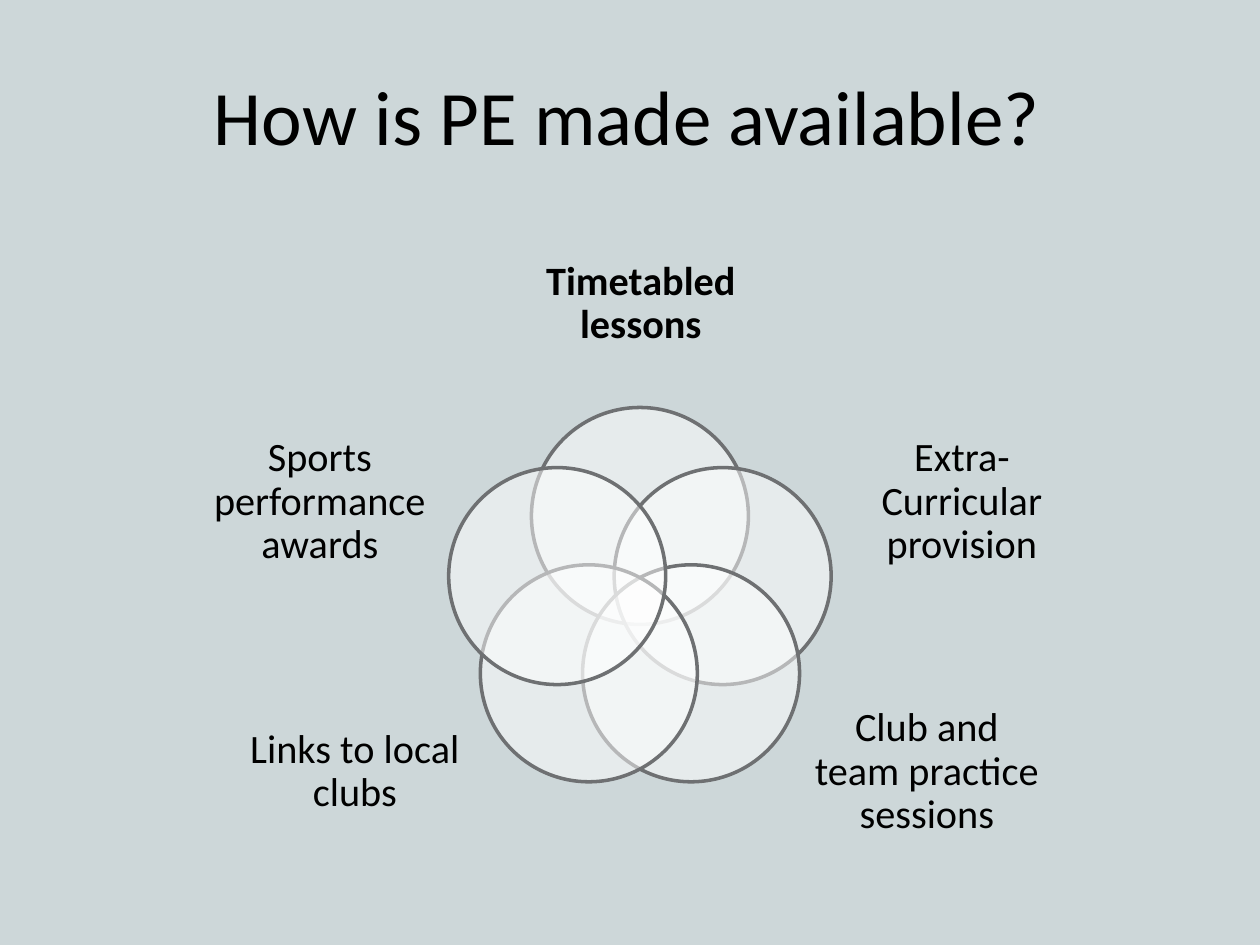
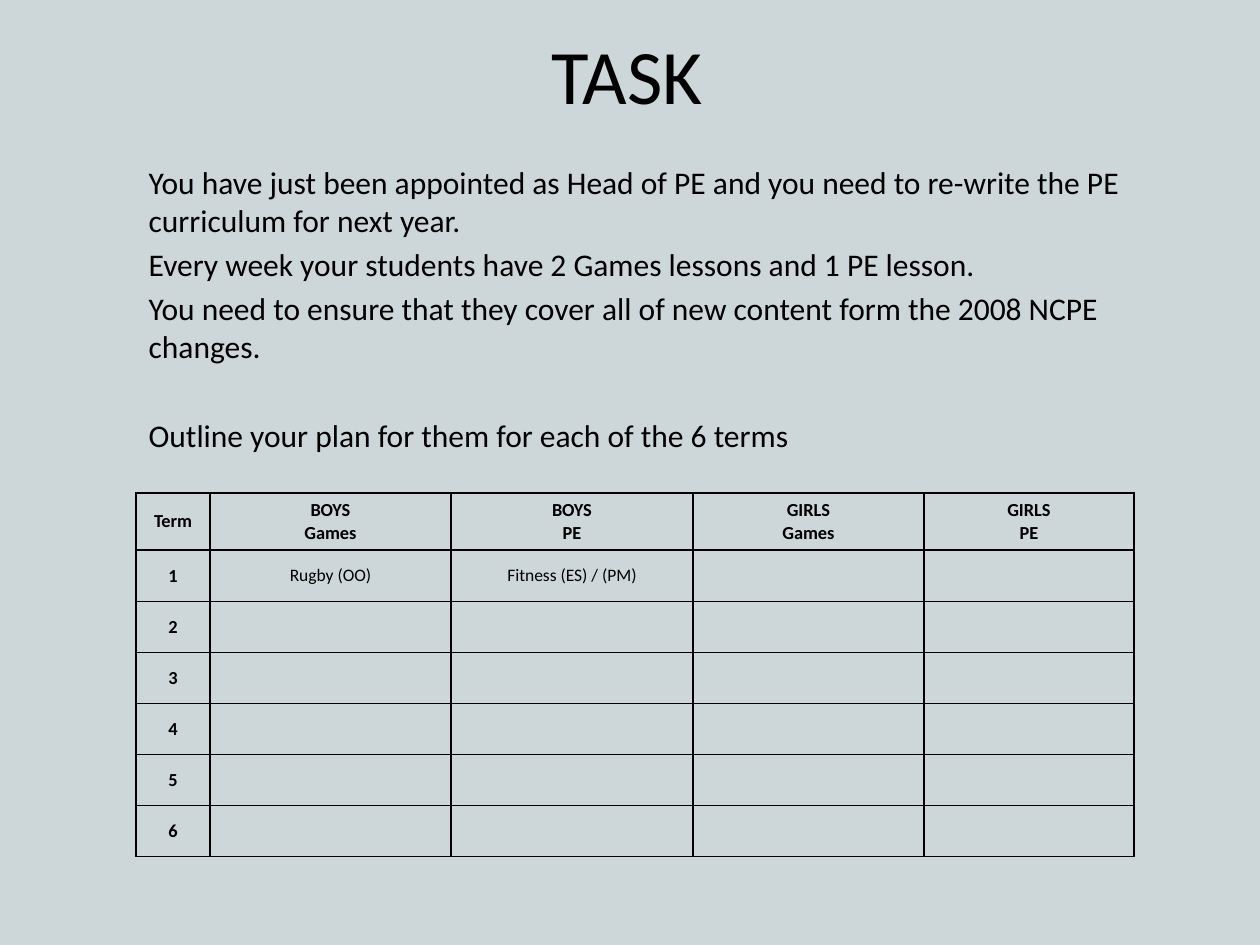
import math
from lxml import etree
from pptx import Presentation, util as u
from pptx.dml.color import RGBColor
from pptx.enum import shapes, text
from pptx.oxml.ns import qn

# Content
VENN_TITLE = "How is PE made available?"
# label, box (left, top, width, height), bold; clockwise from the top
VENN = [
    ("Timetabled lessons", (515, 231, 252, 146), True),
    ("Extra-Curricular provision", (849, 423, 226, 158), False),
    ("Club and team practice sessions", (814, 693, 226, 158), False),
    ("Links to local clubs", (242, 693, 226, 158), False),
    ("Sports performance awards", (207, 423, 226, 158), False),
]
TASK_TITLE = "TASK"
# paragraph, space before in points
TASK = [
    ("You have just been appointed as Head of PE and you need to re-write the PE "
     "curriculum for next year.", 3.6),
    ("Every week your students have 2 Games lessons and 1 PE lesson.", 3.6),
    ("You need to ensure that they cover all of new content form the 2008 NCPE changes.", 3.6),
    ("Outline your plan for them for each of the 6 terms", 29),
]
HEADER = [["Term"], ["BOYS", "Games"], ["BOYS", "PE"], ["GIRLS", "Games"], ["GIRLS", "PE"]]
TERMS = 6
PLAN = {(1, 1): "Rugby (OO)", (1, 2): "Fitness (ES) / (PM)"}

# Shared look and measures
COLORS = {"back": "CDD7D9", "text": "000000", "circle": "FFFFFF", "ring": "6E7072"}
FONT = "Calibri"
RING_CENTER, RING_RADIUS, CIRCLE = (640, 603), 87, 217
COL_WIDTHS = [74, 241, 242, 231, 210]
HEAD_HEIGHT, ROW_HEIGHT = 57, 51


def px(n):
    return u.Emu(round(n * 914400 / 126))


def rgb(name):
    return RGBColor.from_string(COLORS[name])


def place(sp, box):
    sp.left, sp.top, sp.width, sp.height = map(px, box)


def add_run(p, words, size, bold=False):
    r = p.add_run()
    r.text = words
    r.font.name, r.font.size, r.font.bold = FONT, u.Pt(size), bold
    r.font.color.rgb = rgb("text")


def add_slide(prs, layout, title, box):
    s = prs.slides.add_slide(prs.slide_layouts[layout])
    place(s.shapes.title, box)
    tf = s.shapes.title.text_frame
    tf.auto_size = text.MSO_AUTO_SIZE.NONE
    tf.vertical_anchor = text.MSO_ANCHOR.MIDDLE
    tf.paragraphs[0].alignment = text.PP_ALIGN.CENTER
    add_run(tf.paragraphs[0], title, 44)
    return s


def add_circle(group, index):
    angle = math.radians(360 / len(VENN) * index)
    left = RING_CENTER[0] + RING_RADIUS * math.sin(angle) - CIRCLE / 2
    top = RING_CENTER[1] - RING_RADIUS * math.cos(angle) - CIRCLE / 2
    sp = group.shapes.add_shape(shapes.MSO_SHAPE.OVAL, *map(px, (left, top, CIRCLE, CIRCLE)))
    sp.shadow.inherit = False
    sp.fill.solid()
    sp.fill.fore_color.rgb = rgb("circle")
    color = sp.fill._xPr.find(qn("a:solidFill"))[0]
    etree.SubElement(color, qn("a:alpha"), val="50000")
    sp.line.color.rgb = rgb("ring")
    sp.line.width = u.Pt(2)


def add_label(group, words, box, bold):
    tf = group.shapes.add_textbox(*map(px, box)).text_frame
    tf.word_wrap = True
    tf.vertical_anchor = text.MSO_ANCHOR.MIDDLE
    tf.margin_left = tf.margin_right = tf.margin_top = tf.margin_bottom = 0
    p = tf.paragraphs[0]
    p.alignment, p.line_spacing = text.PP_ALIGN.CENTER, 0.9
    add_run(p, words, 23, bold)


def fill_cell(cell, lines, size, bold):
    tc_pr = cell._tc.get_or_add_tcPr()
    for side in ("lnL", "lnR", "lnT", "lnB"):
        ln = etree.SubElement(tc_pr, qn("a:" + side), w=str(u.Pt(1)))
        fill = etree.SubElement(ln, qn("a:solidFill"))
        etree.SubElement(fill, qn("a:srgbClr"), val=COLORS["text"])
    cell.fill.background()
    cell.vertical_anchor = text.MSO_ANCHOR.MIDDLE
    tf = cell.text_frame
    for i, line in enumerate(lines):
        p = tf.add_paragraph() if i else tf.paragraphs[0]
        p.alignment = text.PP_ALIGN.CENTER
        add_run(p, line, size, bold)


def venn_slide(prs):
    s = add_slide(prs, 5, VENN_TITLE, (147, 32, 960, 166))
    group = s.shapes.add_group_shape()
    for i, (words, box, bold) in enumerate(VENN):
        add_circle(group, i)
        add_label(group, words, box, bold)


def task_slide(prs):
    s = add_slide(prs, 1, TASK_TITLE, (147, 21, 960, 105))

    # Instructions
    body = s.placeholders[1]
    place(body, (136, 157, 998, 349))
    tf = body.text_frame
    tf.auto_size = text.MSO_AUTO_SIZE.NONE
    for i, (words, space) in enumerate(TASK):
        p = tf.add_paragraph() if i else tf.paragraphs[0]
        p.space_before = u.Pt(space)
        p_pr = p._p.get_or_add_pPr()
        p_pr.set("marL", "0")
        p_pr.set("indent", "0")
        etree.SubElement(p_pr, qn("a:buNone"))
        add_run(p, words, 18)

    # Plan table
    heights = [HEAD_HEIGHT] + [ROW_HEIGHT] * TERMS
    box = (136, 493, sum(COL_WIDTHS), sum(heights))
    table = s.shapes.add_table(len(heights), len(COL_WIDTHS), *map(px, box)).table
    table.first_row = table.horz_banding = False
    for col, width in zip(table.columns, COL_WIDTHS):
        col.width = px(width)
    for r, height in enumerate(heights):
        table.rows[r].height = px(height)
        for c in range(len(COL_WIDTHS)):
            if r == 0:
                lines = HEADER[c]
            elif c == 0:
                lines = [str(r)]
            else:
                lines = [PLAN[r, c]] if (r, c) in PLAN else []
            heading = r == 0 or c == 0
            fill_cell(table.cell(r, c), lines, 10.5 if heading else 10, heading)


def main():
    prs = Presentation()
    prs.slide_width, prs.slide_height = px(1260), px(945)
    back = prs.slide_master.background.fill
    back.solid()
    back.fore_color.rgb = rgb("back")
    venn_slide(prs)
    task_slide(prs)
    prs.save("out.pptx")


if __name__ == "__main__":
    main()
